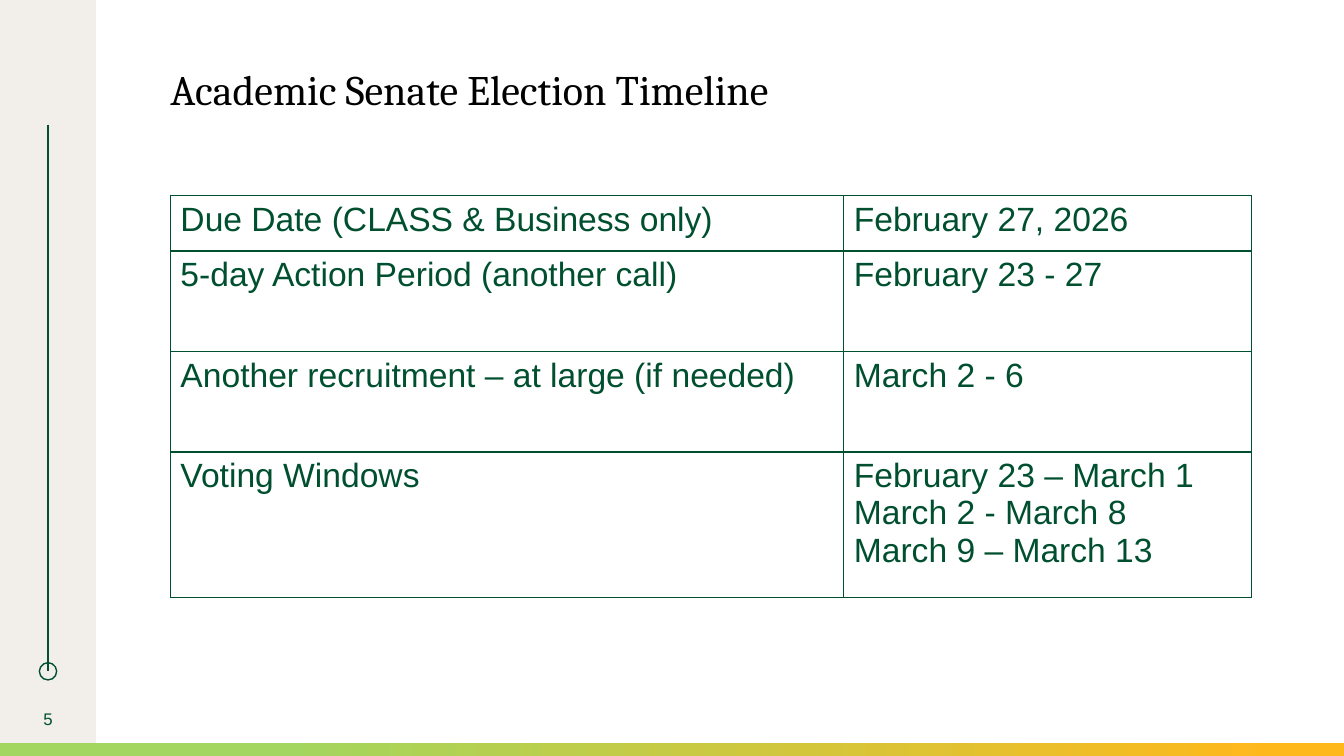
import pptx
import pptx.util
import pptx.dml.color
import pptx.enum.shapes
import pptx.enum.text
import pptx.oxml
import pptx.oxml.ns
import lxml.etree

Inches = pptx.util.Inches
Pt = pptx.util.Pt
Shape = pptx.enum.shapes.MSO_SHAPE
Align = pptx.enum.text.PP_ALIGN
Anchor = pptx.enum.text.MSO_ANCHOR

WIDE, HIGH = 13.33, 7.5
GREEN, SAND, LIME, GOLD = "005030", "F2EEE9", "A3D65E", "FFB81C"
SIDE = WIDE / 14
LEFT = 1.69
DATES = [
    ("Due Date (CLASS & Business only)", "February 27, 2026"),
    ("5-day Action Period (another call)", "February 23 - 27"),
    ("Another recruitment – at large (if needed)", "March 2 - 6"),
    ("Voting Windows",
     "February 23 – March 1\nMarch 2 - March 8\nMarch 9 – March 13"),
]


def color(code):
    return pptx.dml.color.RGBColor.from_string(code)


def write(frame, text, size=24, font="Arial", ink=GREEN, align=Align.LEFT,
          space=None):
    frame.word_wrap = True
    frame.text = text
    for para in frame.paragraphs:
        para.alignment = align
        para.line_spacing = space
        for run in para.runs:
            run.font.size = Pt(size)
            run.font.name = font
            run.font.color.rgb = color(ink)


def label(slide, box, text, anchor=Anchor.TOP, **style):
    frame = slide.shapes.add_textbox(*map(Inches, box)).text_frame
    frame.margin_left = frame.margin_right = 0
    frame.margin_top = frame.margin_bottom = 0
    frame.vertical_anchor = anchor
    write(frame, text, **style)


def block(slide, kind, box, fill=None, line=None):
    shape = slide.shapes.add_shape(kind, *map(Inches, box))
    shape.shadow.inherit = False
    if fill:
        shape.fill.solid()
        shape.fill.fore_color.rgb = color(fill)
    else:
        shape.fill.background()
    if line:
        shape.line.color.rgb = color(line)
        shape.line.width = Pt(1)
    else:
        shape.line.fill.background()
    return shape


def sidebar(slide, box, number):
    left, top, width, height = box
    block(slide, Shape.RECTANGLE, box, fill=SAND)
    mid = left + width / 2
    start, end = top + height * 0.165, top + height * 0.888
    stem = slide.shapes.add_connector(
        pptx.enum.shapes.MSO_CONNECTOR.STRAIGHT,
        *map(Inches, (mid, start, mid, end)))
    stem.line.color.rgb = color(GREEN)
    stem.line.width = Pt(1)
    lxml.etree.SubElement(stem.line._get_or_add_ln().getparent(),
                          pptx.oxml.ns.qn("a:effectLst"))
    ring = width * 0.18
    block(slide, Shape.OVAL, (mid - ring / 2, end - ring / 2, ring, ring),
          line=GREEN)
    label(slide, (left, top + height * 0.924, width, height * 0.053), number,
          anchor=Anchor.MIDDLE, size=12, align=Align.CENTER)


def footer(slide, box):
    fill = block(slide, Shape.RECTANGLE, box).fill
    fill.gradient()
    fill.gradient_angle = 0
    for stop, (place, code) in zip(fill.gradient_stops,
                                   [(0.21, LIME), (0.95, GOLD)]):
        stop.position = place
        stop.color.rgb = color(code)


def border(cell):
    props = cell._tc.get_or_add_tcPr()
    for spot, edge in enumerate("LRTB"):
        props.insert(spot, pptx.oxml.parse_xml(
            f'<a:ln{edge} {pptx.oxml.ns.nsdecls("a")} w="{Pt(1)}">'
            f'<a:solidFill><a:srgbClr val="{GREEN}"/></a:solidFill>'
            f'</a:ln{edge}>'))


def dates(slide, box, rows):
    width, height = box[2:]
    table = slide.shapes.add_table(len(rows), 2, *map(Inches, box)).table
    table.first_row = table.horz_banding = False
    for column, share in zip(table.columns, (0.623, 0.377)):
        column.width = Inches(width * share)
    for row, share, texts in zip(table.rows, (0.138, 0.25, 0.25, 0.362), rows):
        row.height = Inches(height * share)
        for cell, text in zip(row.cells, texts):
            cell.fill.background()
            border(cell)
            write(cell.text_frame, text)


def main():
    deck = pptx.Presentation()
    deck.slide_width, deck.slide_height = Inches(WIDE), Inches(HIGH)
    slide = deck.slides.add_slide(deck.slide_layouts[6])
    sidebar(slide, (0, 0, SIDE, HIGH), "5")
    footer(slide, (0, HIGH - 0.13, WIDE, 0.13))
    label(slide, (LEFT, 0.69, 9.05, 0.45), "Academic Senate Election Timeline",
          size=30, font="Cambria", ink="000000", space=0.9)
    dates(slide, (LEFT, 1.94, 10.72, 3.99), DATES)
    deck.save("out.pptx")


if __name__ == "__main__":
    main()
